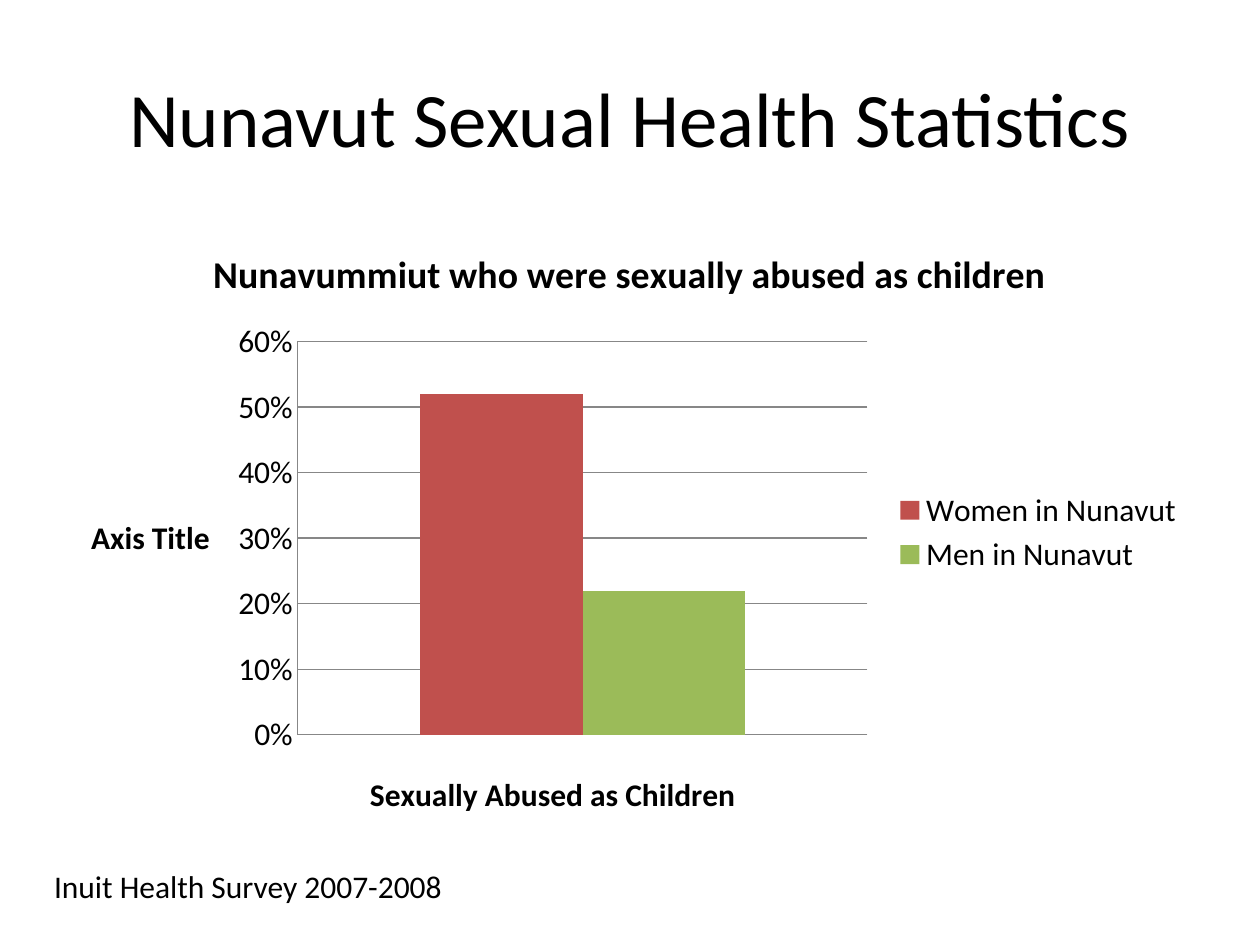
from pptx import Presentation
from pptx.chart.data import CategoryChartData
from pptx.dml.color import RGBColor
from pptx.enum.chart import XL_CHART_TYPE as ChartType, XL_LEGEND_POSITION as LegendPosition
from pptx.enum.chart import XL_TICK_MARK as TickMark
from pptx.enum.text import MSO_ANCHOR as Anchor, PP_ALIGN as Align
from pptx.util import Cm, Pt

COLORS = {"text": "000000", "axis": "878787", "women": "C0504D", "men": "9BBB59"}
SERIES = [("Women in Nunavut", 0.52, "women"), ("Men in Nunavut", 0.22, "men")]


class SlideBuilder:
    font_name = "Calibri"
    body_size = 18

    def __init__(self, deck):
        self.page = deck.slides.add_slide(deck.slide_layouts[5])

    def style_font(self, font, size, bold=False):
        font.name = self.font_name
        font.size = Pt(size)
        font.bold = bold
        font.color.rgb = RGBColor.from_string(COLORS["text"])

    def add_span(self, frame, text, size, bold=False):
        span = frame.paragraphs[0].add_run()
        span.text = text
        self.style_font(span.font, size, bold)

    def add_title(self, text, left, top, width, height):
        box = self.page.shapes.title
        box.left, box.top, box.width, box.height = left, top, width, height
        box.text_frame.vertical_anchor = Anchor.MIDDLE
        box.text_frame.paragraphs[0].alignment = Align.CENTER
        self.add_span(box.text_frame, text, 44)

    def add_note(self, text, left, top, width, height):
        box = self.page.shapes.add_textbox(left, top, width, height)
        box.text_frame.word_wrap = True
        self.add_span(box.text_frame, text, self.body_size)

    def add_columns(self, title, category_title, value_title, left, top, width, height):
        data = CategoryChartData(number_format="0%")
        data.categories = ["1"]
        for name, value, _ in SERIES:
            data.add_series(name, [value])
        chart = self.page.shapes.add_chart(
            ChartType.COLUMN_CLUSTERED, left, top, width, height, data).chart
        self.style_font(chart.font, self.body_size)
        self.add_span(chart.chart_title.text_frame, title, 21.6, bold=True)
        chart.has_legend = True
        chart.legend.position = LegendPosition.RIGHT
        chart.legend.include_in_layout = False

        plot = chart.plots[0]
        plot.gap_width = 150
        plot.overlap = 0
        plot.vary_by_categories = False
        for series, (_, _, color) in zip(plot.series, SERIES):
            series.format.fill.solid()
            series.format.fill.fore_color.rgb = RGBColor.from_string(COLORS[color])

        values = chart.value_axis
        for axis, text in ((chart.category_axis, category_title), (values, value_title)):
            self.add_span(axis.axis_title.text_frame, text, self.body_size, bold=True)
        chart.category_axis.visible = False
        values.minimum_scale, values.maximum_scale, values.major_unit = 0, 0.6, 0.1
        values.major_tick_mark = TickMark.NONE
        values.tick_labels.number_format = "0%"
        values.tick_labels.number_format_is_linked = False
        for line in (values.format.line, values.major_gridlines.format.line):
            line.width = Pt(0.75)
            line.color.rgb = RGBColor.from_string(COLORS["axis"])
        for body in chart.element.xpath(".//c:valAx/c:title//a:bodyPr"):
            body.set("rot", "0")
            body.set("vert", "horz")


def main():
    deck = Presentation()
    deck.slide_width, deck.slide_height = Cm(25.4), Cm(19.05)
    slide = SlideBuilder(deck)
    margin, width = Cm(1.27), Cm(22.86)
    slide.add_title("Nunavut Sexual Health Statistics", margin, Cm(0.76), width, Cm(3.18))
    slide.add_columns("Nunavummiut who were sexually abused as children",
                      "Sexually Abused as Children", "Axis Title",
                      margin, Cm(4.45), width, Cm(12.57))
    slide.add_note("Inuit Health Survey 2007-2008", Cm(0.84), Cm(17.35), Cm(10.36), Cm(1.02))
    deck.save("out.pptx")


if __name__ == "__main__":
    main()
